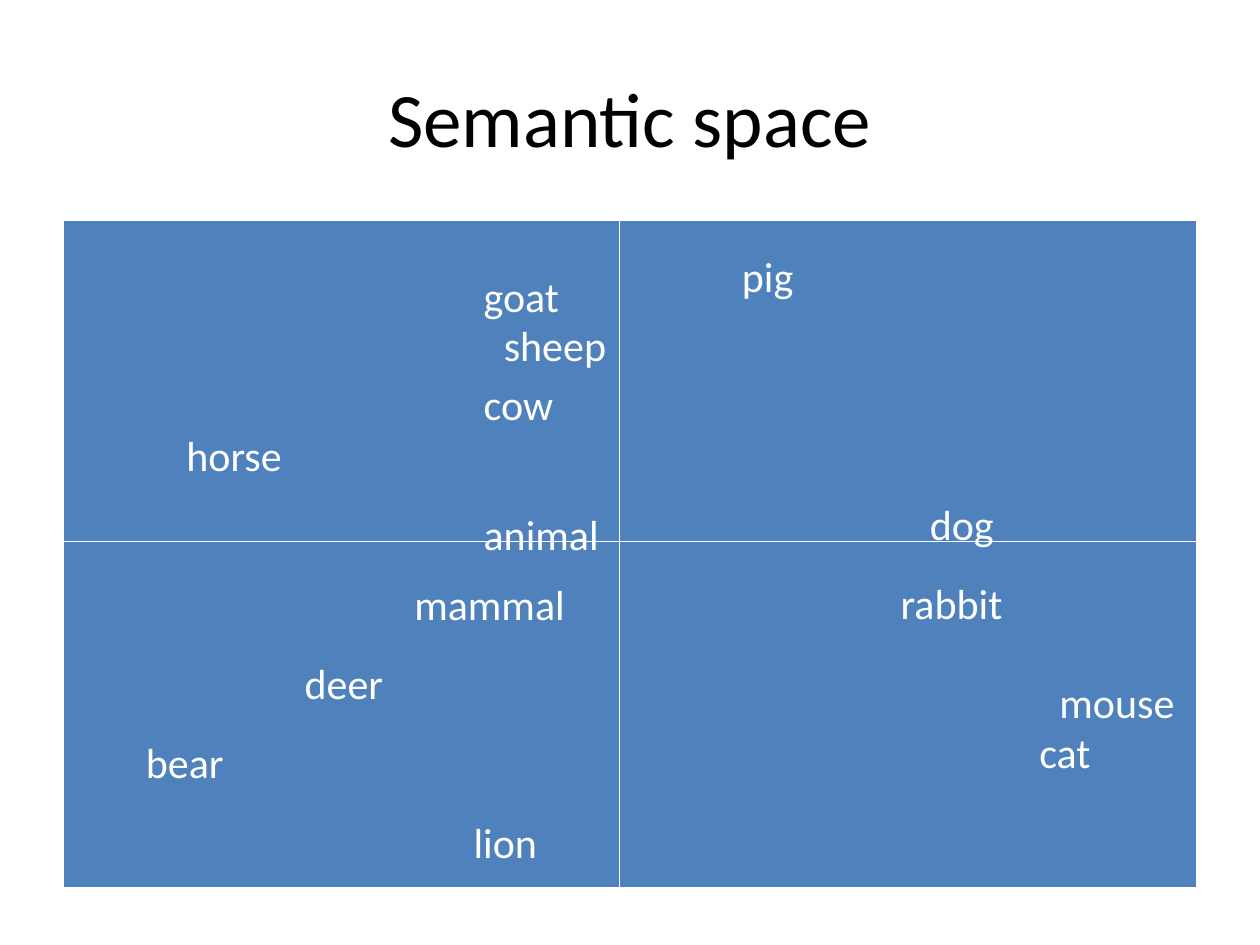
from dataclasses import dataclass

from lxml import etree
from pptx import Presentation
from pptx.dml.color import RGBColor
from pptx.enum.shapes import MSO_CONNECTOR
from pptx.enum.text import MSO_ANCHOR, MSO_AUTO_SIZE, PP_ALIGN
from pptx.oxml.ns import qn
from pptx.util import Pt

STRAIGHT = MSO_CONNECTOR.STRAIGHT
MIDDLE = MSO_ANCHOR.MIDDLE
GROW = MSO_AUTO_SIZE.SHAPE_TO_FIT_TEXT
CENTER, LEFT = PP_ALIGN.CENTER, PP_ALIGN.LEFT


@dataclass(frozen=True)
class Theme:
    font: str = "Calibri"
    ink: str = "000000"
    paper: str = "FFFFFF"
    panel: str = "4F81BD"
    title_size: float = 44
    word_size: float = 24
    axis_width: float = 0.75


THEME = Theme()
TITLE_BOX = (36, 21.6, 648, 90)
SPACE_BOX = (36, 126, 648, 382)
WORD_HEIGHT = 36
AXIS_X, AXIS_Y = 318, 183.6
BORDERS = {"a:lnL": 1, "a:lnR": 1, "a:lnT": 1, "a:lnB": 3}
WORDS = [
    ("goat", 233.3, 25, 58),
    ("sheep", 244.8, 53.3, 73),
    ("cow", 233.3, 87, 57),
    ("horse", 63.4, 116, 70),
    ("animal", 233.3, 161.3, 81),
    ("pig", 380.9, 13.7, 44),
    ("dog", 488.2, 155.5, 51),
    ("mammal", 193.7, 201, 102),
    ("deer", 131, 246.2, 60),
    ("bear", 40.3, 291.6, 60),
    ("lion", 227.5, 337, 51),
    ("rabbit", 471.6, 200.2, 73),
    ("mouse", 562.3, 257, 81),
    ("cat", 550.8, 285.8, 44),
]


def add_text(slide, box, text, size, color, align):
    label = slide.shapes.add_textbox(*map(Pt, box))
    paragraph = label.text_frame.paragraphs[0]
    paragraph.alignment = align
    run = paragraph.add_run()
    run.text = text
    run.font.name = THEME.font
    run.font.size = Pt(size)
    run.font.color.rgb = RGBColor.from_string(color)
    return label.text_frame


def add_title(slide, box):
    frame = add_text(slide, box, "Semantic space", THEME.title_size, THEME.ink, CENTER)
    frame.word_wrap = True
    frame.vertical_anchor = MIDDLE


def add_panel(slide, box):
    table = slide.shapes.add_table(1, 1, *map(Pt, box)).table
    table.first_row = False
    table.horz_banding = False
    cell = table.cell(0, 0)
    properties = cell._tc.get_or_add_tcPr()
    for side, width in BORDERS.items():
        border = etree.SubElement(properties, qn(side), w=str(Pt(width)))
        fill = etree.SubElement(border, qn("a:solidFill"))
        etree.SubElement(fill, qn("a:srgbClr"), val=THEME.paper)
    cell.fill.solid()
    cell.fill.fore_color.rgb = RGBColor.from_string(THEME.panel)


def add_axis(slide, start, end):
    axis = slide.shapes.add_connector(STRAIGHT, *map(Pt, start + end))
    axis.line.width = Pt(THEME.axis_width)
    axis.line.color.rgb = RGBColor.from_string(THEME.paper)
    etree.SubElement(axis._element.spPr, qn("a:effectLst"))


def add_semantic_space(slide, box):
    left, top, width, height = box
    add_panel(slide, box)
    add_axis(slide, (left + AXIS_X, top - 3.6), (left + AXIS_X, top + height))
    add_axis(slide, (left + 0.7, top + AXIS_Y), (left + width - 0.7, top + AXIS_Y))
    for word, x, y, word_width in WORDS:
        word_box = (left + x, top + y, word_width, WORD_HEIGHT)
        frame = add_text(slide, word_box, word, THEME.word_size, THEME.paper, LEFT)
        frame.word_wrap = False
        frame.auto_size = GROW


def main():
    deck = Presentation()
    deck.slide_width, deck.slide_height = Pt(720), Pt(540)
    slide = deck.slides.add_slide(deck.slide_layouts[6])
    add_title(slide, TITLE_BOX)
    add_semantic_space(slide, SPACE_BOX)
    deck.save("out.pptx")


if __name__ == "__main__":
    main()
